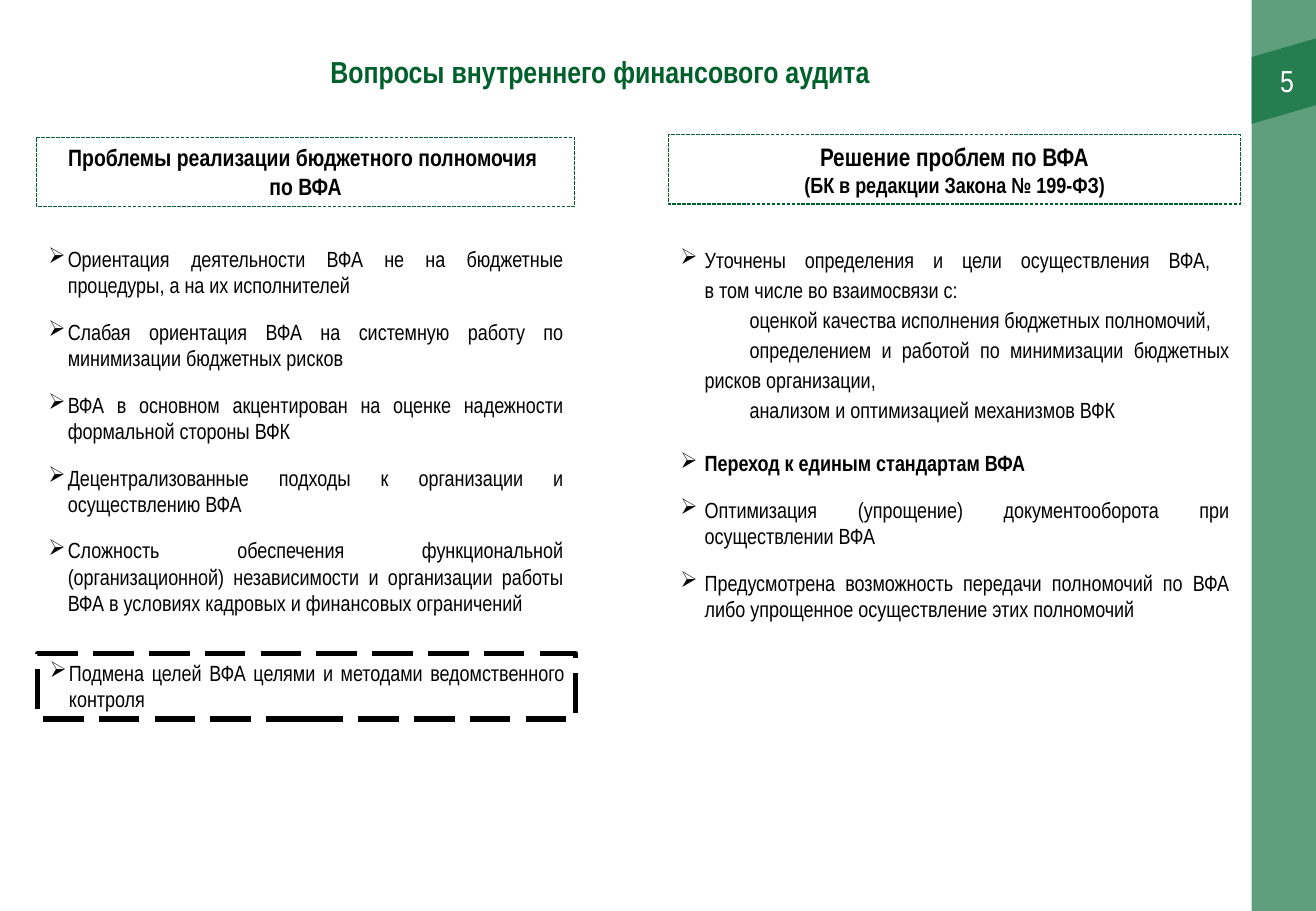
import copy
import pptx
import pptx.util
import pptx.dml.color
import pptx.enum.dml
import pptx.enum.shapes
import pptx.enum.text
import pptx.oxml
import pptx.oxml.ns
from lxml import etree

# Content
TITLE = "Вопросы внутреннего финансового аудита"
PAGE = "5"
FLAWS_HEAD = [("Проблемы реализации бюджетного полномочия \nпо ВФА", {})]
FIXES_HEAD = [("Решение проблем по ВФА\n", {"size": 15}),
              ("(БК в редакции Закона № 199-ФЗ)", {"size": 13})]
FLAWS = [
    "Ориентация деятельности ВФА не на бюджетные процедуры, а на их исполнителей",
    "Слабая ориентация ВФА на системную работу по минимизации бюджетных рисков",
    "ВФА в основном акцентирован на оценке надежности формальной стороны ВФК",
    "Децентрализованные подходы к организации и осуществлению ВФА",
    "Сложность обеспечения функциональной (организационной) независимости "
    "и организации работы ВФА в условиях кадровых и финансовых ограничений",
]
KEY_FLAW = "Подмена целей ВФА целями и методами ведомственного контроля"
SCOPE = "Уточнены определения и цели осуществления ВФА, \nв том числе во взаимосвязи с:"
GOALS = [
    "оценкой качества исполнения бюджетных полномочий,",
    "определением и работой по минимизации бюджетных рисков организации, ",
    "анализом и оптимизацией механизмов ВФК",
]
SHIFT = "Переход к единым стандартам ВФА"
FIXES = [
    "Оптимизация (упрощение) документооборота при осуществлении ВФА",
    "Предусмотрена возможность передачи полномочий по ВФА либо упрощенное "
    "осуществление этих полномочий",
]

COLORS = {"band": "066A36", "green": "00602B", "black": "000000", "white": "FFFFFF"}
FONT = "Arial Narrow"
SCALE = 9144  # EMU per px, 100 px to the inch
LEFT, LEFT_W = 30, 443
RIGHT, RIGHT_W = 550, 471
BAND, BAND_W = 1030, 55

ALIGN = pptx.enum.text.PP_ALIGN
DASH = pptx.enum.dml.MSO_LINE
RECT = pptx.enum.shapes.MSO_SHAPE.RECTANGLE


def px(n):
    return pptx.util.Emu(n * SCALE)


def rgb(name):
    return pptx.dml.color.RGBColor.from_string(COLORS[name])


def write(par, text, size=13, color="black", bold=False):
    for i, line in enumerate(text.split("\n")):
        if i:
            par.add_line_break()
            style = copy.deepcopy(run.font._element)
            par._p.findall(pptx.oxml.ns.qn("a:br"))[-1].append(style)
        if not line:
            continue
        run = par.add_run()
        run.text = line
        run.font.name, run.font.size = FONT, pptx.util.Pt(size)
        run.font.bold = bold
        run.font.color.rgb = rgb(color)


def add_par(frame, text, align=ALIGN.JUSTIFY, space=None, after=None,
            left=None, indent=0, bullet=False, **style):
    par = frame.paragraphs[0]
    if par.runs:
        par = frame.add_paragraph()
    par.alignment = align
    if space:
        par.line_spacing = space
    if after:
        par.space_after = pptx.util.Pt(after)
    if left is not None:
        par.level = 1
        props = par._p.get_or_add_pPr()
        props.set("marL", str(px(left)))
        props.set("indent", str(px(indent)))
        kind = "a:buChar" if bullet else "a:buNone"
        mark = etree.SubElement(props, pptx.oxml.ns.qn(kind))
        if bullet:
            mark.set("char", "➢")
    for part, extra in ([(text, {})] if isinstance(text, str) else text):
        write(par, part, **{**style, **extra})


def setup(shape, grow=True):
    frame = shape.text_frame
    frame.word_wrap = True
    fit = pptx.enum.text.MSO_AUTO_SIZE
    frame.auto_size = fit.SHAPE_TO_FIT_TEXT if grow else fit.NONE
    frame.vertical_anchor = pptx.enum.text.MSO_ANCHOR.TOP
    return frame


def add_text(x, y, w, h, grow=True):
    return setup(slide.shapes.add_textbox(px(x), px(y), px(w), px(h)), grow)


def add_frame(x, y, w, h, color, width, dash):
    box = slide.shapes.add_shape(RECT, px(x), px(y), px(w), px(h))
    box.shadow.inherit = False
    box.fill.background()
    box.line.color.rgb = rgb(color)
    box.line.width = pptx.util.Pt(width)
    box.line.dash_style = dash
    return setup(box)


def tint(shape):
    shape.shadow.inherit = False
    shape.line.fill.background()
    shape.fill.solid()
    shape.fill.fore_color.rgb = rgb("band")
    color = shape._element.spPr.find(".//" + pptx.oxml.ns.qn("a:srgbClr"))
    etree.SubElement(color, pptx.oxml.ns.qn("a:alpha")).set("val", "64000")


deck = pptx.Presentation()
deck.slide_width, deck.slide_height = px(1083), px(750)
slide = deck.slides.add_slide(deck.slide_layouts[6])

# Side band with page number
tint(slide.shapes.add_shape(RECT, px(BAND), 0, px(BAND_W), px(750)))
flag = slide.shapes.build_freeform(BAND, 47, scale=SCALE)
flag.add_line_segments([(BAND + BAND_W, 31), (BAND + BAND_W, 86), (BAND, 102)])
tint(flag.convert_to_shape())
page = add_text(824, 46, 253, 40, grow=False)
page.vertical_anchor = pptx.enum.text.MSO_ANCHOR.MIDDLE
page.margin_left = page.margin_right = px(12)
page.margin_top = page.margin_bottom = px(6)
add_par(page, PAGE, align=ALIGN.RIGHT, size=18, color="white")

# Title
add_par(add_text(93, 30, 802, 47), TITLE, align=ALIGN.CENTER,
        space=pptx.util.Pt(28), size=18, color="green", bold=True)

# Column heads
for x, y, w, head in [(LEFT, 113, LEFT_W, FLAWS_HEAD), (RIGHT, 111, RIGHT_W, FIXES_HEAD)]:
    frame = add_frame(x, y, w, 57, "green", 0.75, DASH.SQUARE_DOT)
    add_par(frame, head, align=ALIGN.CENTER, size=14, bold=True)

# Problems, the last one framed
flaw = {"left": 16, "indent": -37, "after": 12, "bullet": True}
frame = add_text(LEFT, 197, LEFT_W, 318)
for text in FLAWS:
    add_par(frame, text, **flaw)
add_par(add_frame(LEFT + 1, 538, LEFT_W, 54, "black", 3, DASH.LONG_DASH), KEY_FLAW, **flaw)

# Solutions
frame = add_text(RIGHT, 195, RIGHT_W, 325)
add_par(frame, SCOPE, left=20, indent=-37, space=1.14, bullet=True)
for text in GOALS:
    add_par(frame, text, left=20, indent=37, space=1.14,
            after=16 if text == GOALS[-1] else None)
for text in [SHIFT] + FIXES:
    add_par(frame, text, left=20, indent=-38, after=12, bullet=True, bold=text == SHIFT)

deck.save("out.pptx")
